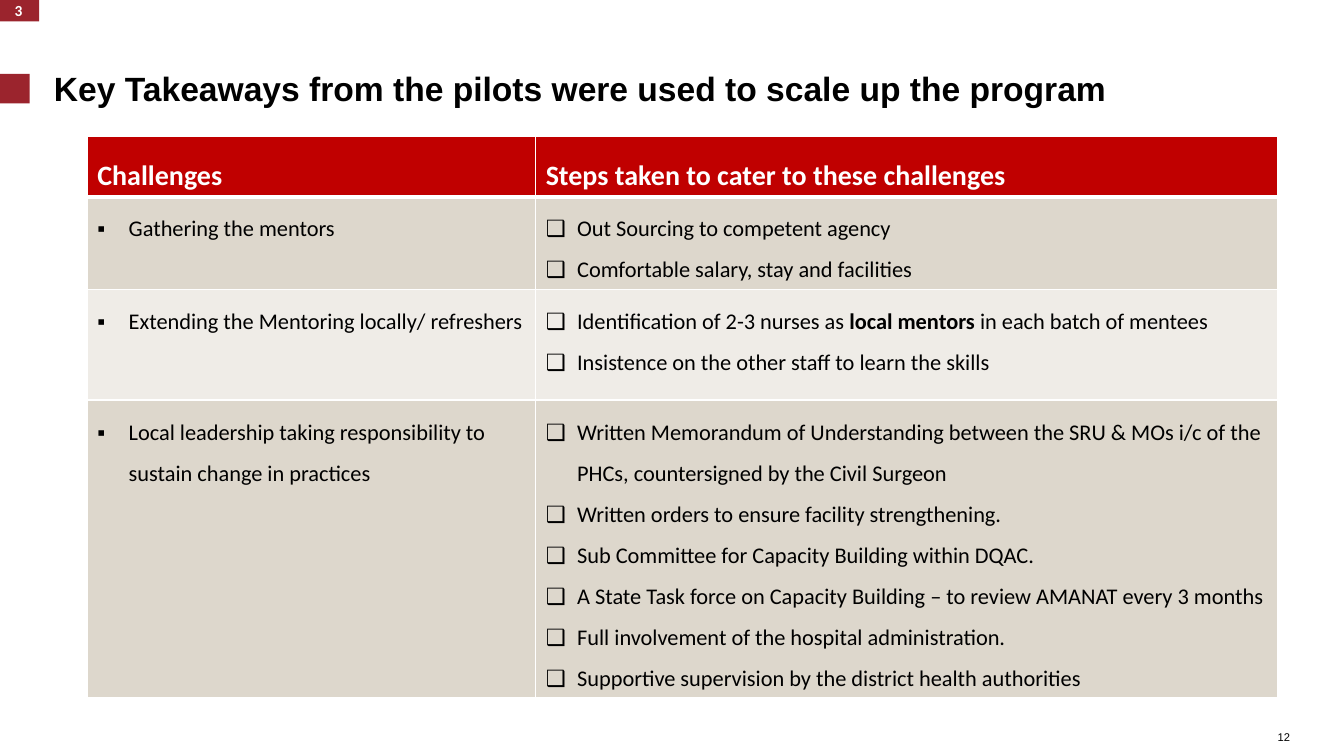
import pptx
import pptx.util
import pptx.dml.color
import pptx.enum.shapes
import pptx.enum.text
import pptx.oxml
import pptx.oxml.ns
import lxml.etree

Cm, Pt = pptx.util.Cm, pptx.util.Pt
Align = pptx.enum.text.PP_ALIGN
Anchor = pptx.enum.text.MSO_ANCHOR

COLORS = {
    "brand": "9B242D",
    "head": "C00000",
    "dark": "DDD7CC",
    "light": "EFECE7",
    "white": "FFFFFF",
    "black": "000000",
}
HEADS = ["Challenges", "Steps taken to cater to these challenges"]
ROWS = [
    ("Gathering the mentors",
     ["Out Sourcing to competent agency",
      "Comfortable salary, stay and facilities"]),
    ("Extending the Mentoring locally/ refreshers",
     ["Identification of 2-3 nurses as **local mentors **in each batch of mentees",
      "Insistence on the other staff to learn the skills"]),
    ("Local leadership taking responsibility to sustain change in practices",
     ["Written Memorandum of Understanding between the SRU & MOs i/c of the PHCs, "
      "countersigned by the Civil Surgeon",
      "Written orders to ensure facility strengthening.",
      "Sub Committee for Capacity Building within DQAC.",
      "A State Task force on Capacity Building – to review AMANAT every 3 months",
      "Full involvement of the hospital administration.",
      "Supportive supervision by the district health authorities"]),
]
WIDTHS = [11.3, 18.7]
HEIGHTS = [1.53, 2.34, 2.78, 7.5]


def color(name):
    """Return the named colour."""
    return pptx.dml.color.RGBColor.from_string(COLORS[name])


def style(para, face, size, tone, bold=False):
    """Set the font of a paragraph."""
    font = para.font
    font.name, font.size, font.bold = face, Pt(size), bold
    font.color.rgb = color(tone)


def trim(frame, anchor):
    """Remove the insets of a text frame and anchor its text."""
    frame.margin_left = frame.margin_right = 0
    frame.margin_top = frame.margin_bottom = 0
    frame.vertical_anchor = anchor
    frame.word_wrap = True


def block(slide, box):
    """Draw a plain brand-coloured rectangle."""
    shape = slide.shapes.add_shape(
        pptx.enum.shapes.MSO_SHAPE.RECTANGLE, *map(Cm, box))
    shape.shadow.inherit = False
    shape.fill.solid()
    shape.fill.fore_color.rgb = color("brand")
    shape.line.fill.background()
    return shape


def title(slide, box):
    """Place and format the title."""
    shape = slide.shapes.title
    shape.left, shape.top, shape.width, shape.height = map(Cm, box)
    frame = shape.text_frame
    trim(frame, Anchor.MIDDLE)
    frame.auto_size = pptx.enum.text.MSO_AUTO_SIZE.NONE
    frame.text = "Key Takeaways from the pilots were used to scale up the program"
    para = frame.paragraphs[0]
    para.alignment = Align.LEFT
    para.line_spacing = Pt(30.7)
    style(para, "Arial", 24, "black", True)


def badge(slide, box):
    """Draw the numbered tab in the corner."""
    frame = block(slide, box).text_frame
    trim(frame, Anchor.MIDDLE)
    frame.text = "3"
    frame.paragraphs[0].alignment = Align.CENTER
    style(frame.paragraphs[0], "Calibri", 11, "white", True)


def number(slide, box):
    """Write the page number."""
    frame = slide.shapes.add_textbox(*map(Cm, box)).text_frame
    trim(frame, Anchor.BOTTOM)
    frame.text = "12"
    frame.paragraphs[0].alignment = Align.RIGHT
    style(frame.paragraphs[0], "Arial", 8, "black")


def bullet(para, mark):
    """Give a paragraph a hanging bullet."""
    props = para._p.get_or_add_pPr()
    props.set("marL", str(Cm(0.79)))
    props.set("indent", str(-Cm(0.79)))
    tag = pptx.oxml.ns.qn
    lxml.etree.SubElement(props, tag("a:buFont")).set("typeface", "Arial")
    lxml.etree.SubElement(props, tag("a:buChar")).set("char", mark)


def border(cell, base):
    """Draw white lines round a cell, the lower one of the given width."""
    props = cell._tc.get_or_add_tcPr()
    for side, width in zip("LRTB", (1, 1, 1, base)):
        props.append(pptx.oxml.parse_xml(
            f'<a:ln{side} {pptx.oxml.ns.nsdecls("a")} w="{Pt(width)}"><a:solidFill>'
            f'<a:srgbClr val="{COLORS["white"]}"/></a:solidFill></a:ln{side}>'))


def fill(cell, lines, tone, mark=None):
    """Fill a cell with heading text or with bulleted lines."""
    head = mark is None
    border(cell, 3 if head else 1)
    cell.fill.solid()
    cell.fill.fore_color.rgb = color(tone)
    frame = cell.text_frame
    for num, line in enumerate(lines):
        para = frame.add_paragraph() if num else frame.paragraphs[0]
        para.line_spacing = 1.5
        for part, text in enumerate(line.split("**")):
            run = para.add_run()
            run.text = text
            if part % 2:
                run.font.bold = True
        if head:
            style(para, "Calibri", 20, "white", True)
        else:
            bullet(para, mark)
            style(para, "Calibri", 16, "black")


def grid(slide, left, top):
    """Build the table of challenges and steps."""
    table = slide.shapes.add_table(
        len(HEIGHTS), len(WIDTHS), Cm(left), Cm(top),
        Cm(sum(WIDTHS)), Cm(sum(HEIGHTS))).table
    for col, width in zip(table.columns, WIDTHS):
        col.width = Cm(width)
    for row, height in zip(table.rows, HEIGHTS):
        row.height = Cm(height)
    for col, text in enumerate(HEADS):
        fill(table.cell(0, col), [text], "head")
    for row, (issue, steps) in enumerate(ROWS, 1):
        tone = "dark" if row % 2 else "light"
        fill(table.cell(row, 0), [issue], tone, "▪")
        fill(table.cell(row, 1), steps, tone, "❑")


def main():
    """Build and save the slide."""
    deck = pptx.Presentation()
    deck.slide_width, deck.slide_height = Cm(33.87), Cm(19.05)
    slide = deck.slides.add_slide(deck.slide_layouts[5])
    block(slide, (0, 1.86, 0.75, 0.75))
    number(slide, (31.55, 18.13, 0.96, 0.6))
    title(slide, (1.36, 1.22, 30.86, 1.93))
    badge(slide, (-0.06, -0.02, 1.05, 0.56))
    grid(slide, 2.2, 3.43)
    deck.save("out.pptx")


if __name__ == "__main__":
    main()
